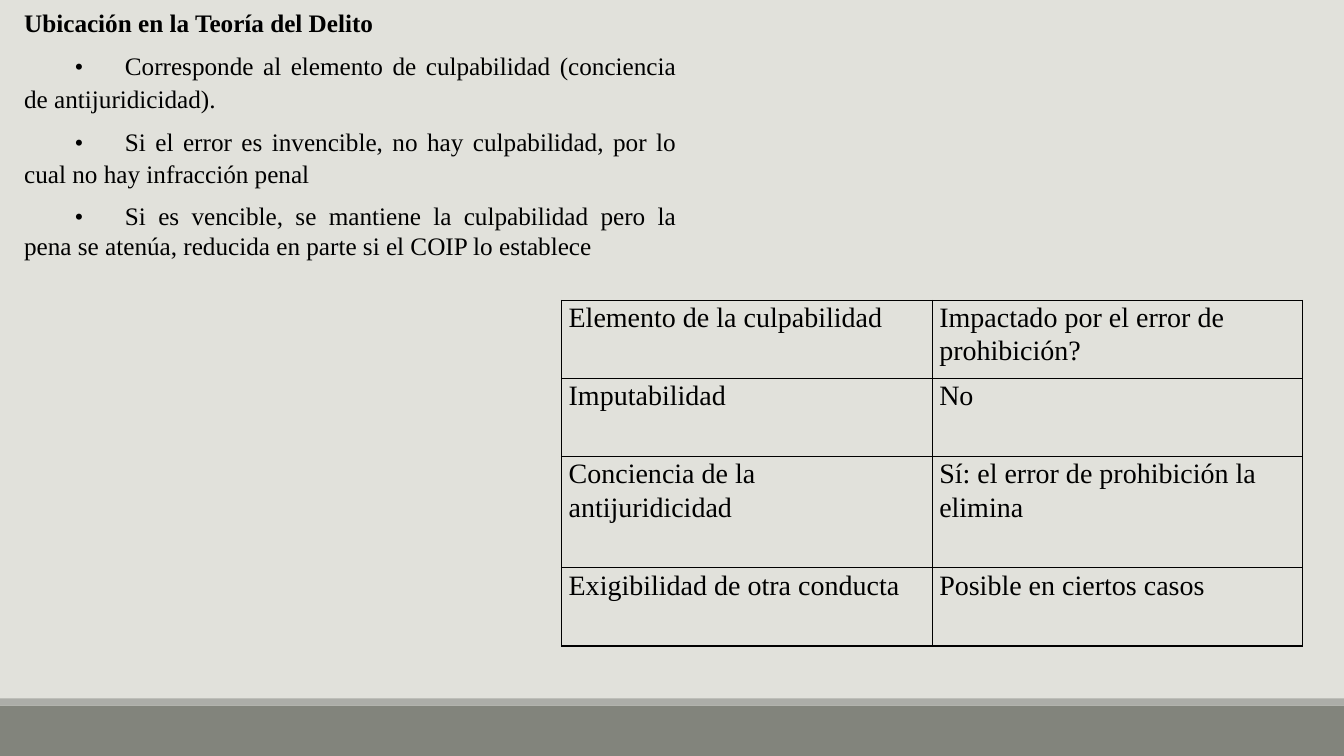
from lxml import etree
from pptx import Presentation
from pptx.dml.color import RGBColor
from pptx.enum.shapes import MSO_SHAPE
from pptx.enum.text import PP_ALIGN
from pptx.oxml.ns import qn
from pptx.util import Cm, Pt

RECTANGLE = MSO_SHAPE.RECTANGLE
JUSTIFY = PP_ALIGN.JUSTIFY

SLIDE_WIDTH, SLIDE_HEIGHT = Cm(33.87), Cm(19.05)
BODY_SPACING = {"line_spacing": 1.07, "space_after": Pt(8)}
LAST_SPACING = {"line_spacing": 1.0, "space_after": Pt(0)}


def color(hex_value):
    return RGBColor.from_string(hex_value)


def write(paragraph, text, size, spacing, bold=False):
    """Add one styled run and set the spacing of its paragraph."""
    for name, value in spacing.items():
        setattr(paragraph, name, value)
    run = paragraph.add_run()
    run.text = text
    font_format = {"name": "Times New Roman", "size": Pt(size), "bold": bold}
    for name, value in font_format.items():
        setattr(run.font, name, value)
    run.font.color.rgb = color("000000")


prs = Presentation()
prs.slide_width, prs.slide_height = SLIDE_WIDTH, SLIDE_HEIGHT
slide = prs.slides.add_slide(prs.slide_layouts[6])
slide.background.fill.solid()
slide.background.fill.fore_color.rgb = color("E1E1DB")

# Footer bands
for top, height, band_color in [(17.78, 1.27, "82847C"), (17.6, 0.18, "ACADA8")]:
    band = slide.shapes.add_shape(RECTANGLE, 0, Cm(top), SLIDE_WIDTH, Cm(height))
    band.shadow.inherit = False
    band.fill.solid()
    band.fill.fore_color.rgb = color(band_color)
    band.line.fill.background()

# Elements of culpability
culpability_rows = [
    (1.97, "Elemento de la culpabilidad", "Impactado por el error de prohibición?"),
    (1.97, "Imputabilidad", "No"),
    (2.8, "Conciencia de la antijuridicidad", "Sí: el error de prohibición la elimina"),
    (1.97, "Exigibilidad de otra conducta", "Posible en ciertos casos"),
]
table_height = sum(row[0] for row in culpability_rows)
culpability = slide.shapes.add_table(
    len(culpability_rows), 2, Cm(14.15), Cm(7.57), Cm(18.68), Cm(table_height)
).table
culpability.first_row = culpability.horz_banding = False
cell_margins = {"margin_left": Cm(0.18), "margin_right": Cm(0.18),
                "margin_top": 0, "margin_bottom": 0}

for row_index, (height, *texts) in enumerate(culpability_rows):
    culpability.rows[row_index].height = Cm(height)
    for column_index, text in enumerate(texts):
        cell = culpability.cell(row_index, column_index)
        for name, value in cell_margins.items():
            setattr(cell, name, value)
        write(cell.text_frame.paragraphs[0], text, 20, BODY_SPACING)
        cell_properties = cell._tc.get_or_add_tcPr()
        for side in ("lnL", "lnR", "lnT", "lnB"):
            border = etree.SubElement(cell_properties, qn(f"a:{side}"), w=str(Pt(1)))
            border_fill = etree.SubElement(border, qn("a:solidFill"))
            etree.SubElement(border_fill, qn("a:srgbClr"), val="000000")
        cell.fill.background()

# Place in the theory of crime
theory = slide.shapes.add_textbox(Cm(0.36), 0, Cm(16.94), Cm(6.76)).text_frame
theory.word_wrap = True
heading = theory.paragraphs[0]
heading.alignment = JUSTIFY
write(heading, "Ubicación en la Teoría del Delito", 18, BODY_SPACING, bold=True)

points = [
    ("Corresponde al elemento de culpabilidad (conciencia de antijuridicidad).",
     BODY_SPACING),
    ("Si el error es invencible, no hay culpabilidad, por lo cual no hay infracción penal",
     BODY_SPACING),
    ("Si es vencible, se mantiene la culpabilidad pero la pena se atenúa, "
     "reducida en parte si el COIP lo establece", LAST_SPACING),
]
for text, spacing in points:
    point = theory.add_paragraph()
    tab_list = etree.SubElement(point._p.get_or_add_pPr(), qn("a:tabLst"))
    for position in (1.27, 2.54):
        etree.SubElement(tab_list, qn("a:tab"), pos=str(Cm(position)), algn="l")
    point.alignment = JUSTIFY
    write(point, f"\t•\t{text}", 18, spacing)

prs.save("out.pptx")
